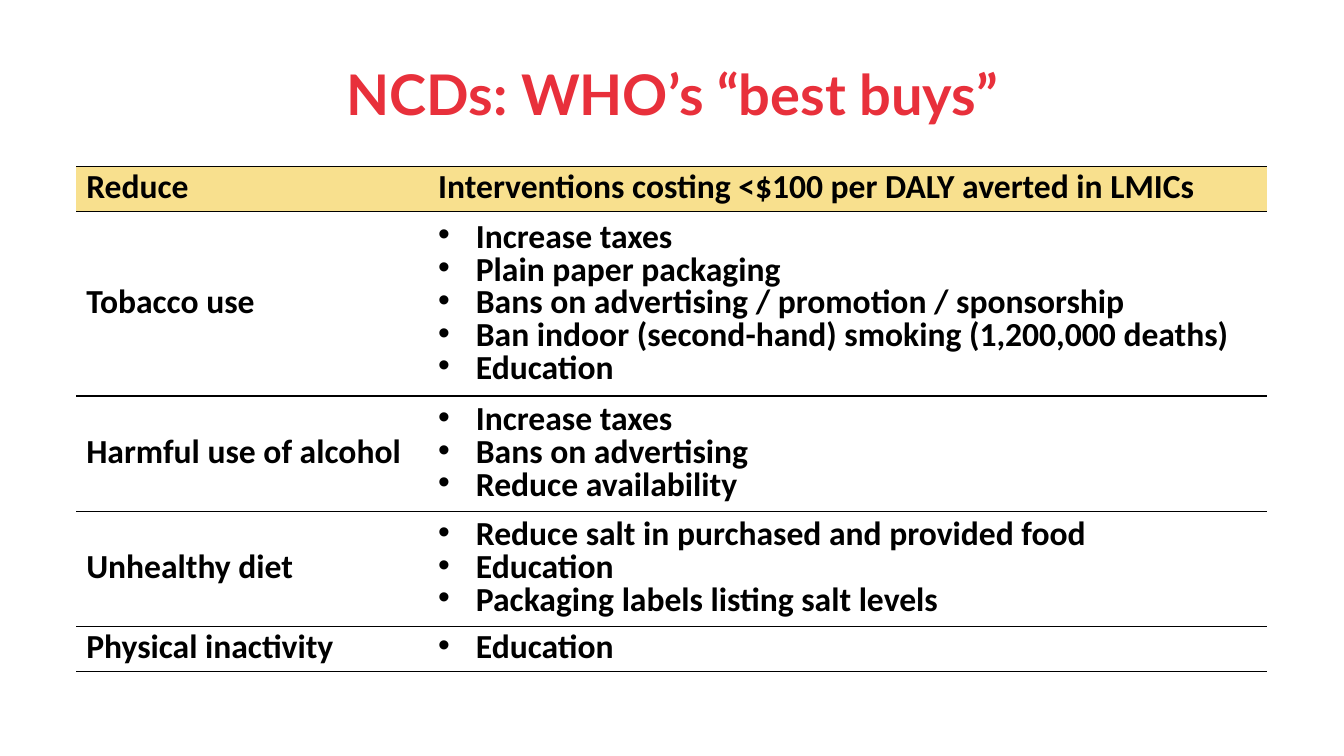
from lxml import etree
from pptx import Presentation
from pptx.dml.color import RGBColor
from pptx.enum.text import MSO_ANCHOR, PP_ALIGN
from pptx.oxml.ns import qn
from pptx.util import Cm, Pt

MIDDLE = MSO_ANCHOR.MIDDLE
CENTER = PP_ALIGN.CENTER
RED = RGBColor(0xE8, 0x30, 0x3B)
BLACK = RGBColor(0, 0, 0)
YELLOW = RGBColor(0xF8, 0xE0, 0x8E)

BULLET_INDENT = Cm(0.95)
COLUMN_WIDTHS = [Cm(8.87), Cm(21.15)]
ROW_HEIGHTS = [Cm(1.15), Cm(4.64), Cm(2.9), Cm(2.9), Cm(1.15)]
HEADERS = ["Reduce", "Interventions costing <$100 per DALY averted in LMICs"]
BEST_BUYS = [
    ("Tobacco use", [
        "Increase taxes",
        "Plain paper packaging",
        "Bans on advertising / promotion / sponsorship",
        "Ban indoor (second-hand) smoking (1,200,000 deaths)",
        "Education",
    ]),
    ("Harmful use of alcohol", [
        "Increase taxes",
        "Bans on advertising",
        "Reduce availability",
    ]),
    ("Unhealthy diet", [
        "Reduce salt in purchased and provided food",
        "Education",
        "Packaging labels listing salt levels",
    ]),
    ("Physical inactivity", ["Education"]),
]


def add_bold_run(paragraph, text, font_name, size, color):
    run = paragraph.add_run()
    run.text = text
    run.font.name = font_name
    run.font.size = Pt(size)
    run.font.bold = True
    run.font.color.rgb = color


def add_title(slide, text):
    box = slide.shapes.add_textbox(Cm(1.7), Cm(0.76), Cm(30.48), Cm(3.18))
    frame = box.text_frame
    frame.word_wrap = True
    frame.vertical_anchor = MIDDLE
    paragraph = frame.paragraphs[0]
    paragraph.alignment = CENTER
    add_bold_run(paragraph, text, "Lato", 40, RED)


def add_bullet(paragraph):
    properties = paragraph._p.get_or_add_pPr()
    properties.set("marL", str(BULLET_INDENT))
    properties.set("indent", str(-BULLET_INDENT))
    etree.SubElement(properties, qn("a:buFont")).set("typeface", "Arial")
    etree.SubElement(properties, qn("a:buChar")).set("char", "•")


def set_horizontal_borders(cell):
    """Rule the cell above and below, leaving its sides open."""
    properties = cell._tc.get_or_add_tcPr()
    for side in ("lnL", "lnR"):
        line = etree.SubElement(properties, qn(f"a:{side}"))
        etree.SubElement(line, qn("a:noFill"))
    for side in ("lnT", "lnB"):
        line = etree.SubElement(properties, qn(f"a:{side}"), w=str(Pt(1)))
        fill = etree.SubElement(line, qn("a:solidFill"))
        etree.SubElement(fill, qn("a:srgbClr")).set("val", str(BLACK))


def fill_cell(cell, lines, bulleted=False, color=None):
    cell.vertical_anchor = MIDDLE
    set_horizontal_borders(cell)
    if color is None:
        cell.fill.background()
    else:
        cell.fill.solid()
        cell.fill.fore_color.rgb = color
    frame = cell.text_frame
    for index, text in enumerate(lines):
        paragraph = frame.add_paragraph() if index else frame.paragraphs[0]
        paragraph.line_spacing = 0.8
        if bulleted:
            add_bullet(paragraph)
        add_bold_run(paragraph, text, "Calibri", 24, BLACK)


def add_best_buys_table(slide):
    table = slide.shapes.add_table(
        len(ROW_HEIGHTS), len(COLUMN_WIDTHS), Cm(1.92), Cm(4.19),
        sum(COLUMN_WIDTHS), sum(ROW_HEIGHTS)).table
    table.first_row = False
    table.horz_banding = False
    for column, width in zip(table.columns, COLUMN_WIDTHS):
        column.width = width
    for row, height in zip(table.rows, ROW_HEIGHTS):
        row.height = height
    for column_index, header in enumerate(HEADERS):
        fill_cell(table.cell(0, column_index), [header], color=YELLOW)
    for row_index, (risk, interventions) in enumerate(BEST_BUYS, start=1):
        fill_cell(table.cell(row_index, 0), [risk])
        fill_cell(table.cell(row_index, 1), interventions, bulleted=True)


def main():
    presentation = Presentation()
    presentation.slide_width = Cm(33.87)
    presentation.slide_height = Cm(19.05)
    slide = presentation.slides.add_slide(presentation.slide_layouts[6])
    add_title(slide, "NCDs: WHO’s “best buys”")
    add_best_buys_table(slide)
    presentation.save("out.pptx")


if __name__ == "__main__":
    main()
